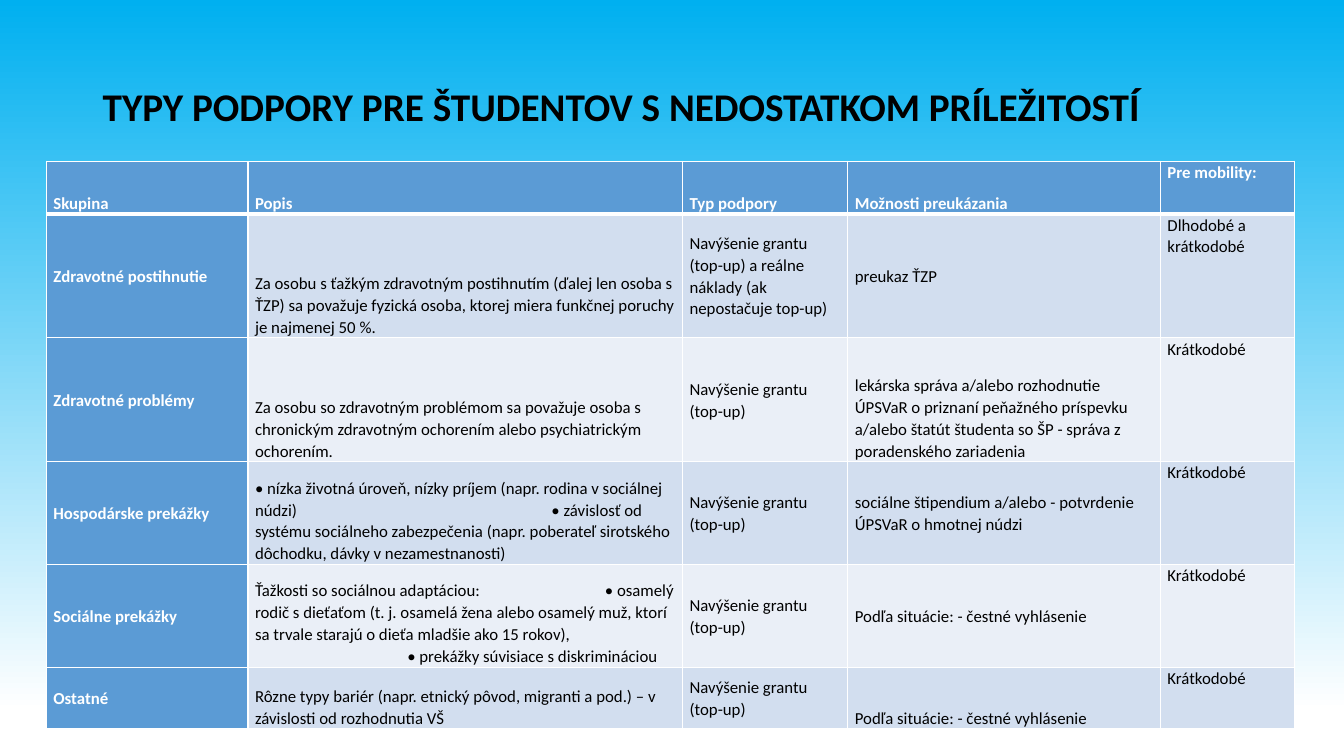
from lxml.etree import SubElement
from pptx import Presentation
from pptx.dml.color import RGBColor
from pptx.enum.text import MSO_ANCHOR
from pptx.oxml.ns import qn
from pptx.util import Inches, Pt

SKY = RGBColor(0x00, 0xB0, 0xF0)
WHITE = RGBColor(0xFF, 0xFF, 0xFF)
BLACK = RGBColor(0x00, 0x00, 0x00)
BLUE = RGBColor(0x5B, 0x9B, 0xD5)
BANDS = (RGBColor(0xEA, 0xEF, 0xF7), RGBColor(0xD2, 0xDE, 0xEF))

FONT = "Calibri"
TITLE = "TYPY PODPORY PRE ŠTUDENTOV S NEDOSTATKOM PRÍLEŽITOSTÍ"
COLUMN_WIDTHS = (2, 4.31, 1.64, 3.1, 1.33)
ROW_HEIGHTS = (0.52, 1.23, 1.23, 1.02, 1.02, 0.61)
GRANT = "Navýšenie grantu (top-up)"
DECLARATION = "Podľa situácie: - čestné vyhlásenie"
SHORT = "Krátkodobé"
ROWS = (
    ("Skupina", "Popis", "Typ podpory", "Možnosti preukázania", "Pre mobility:"),
    ("Zdravotné postihnutie",
     "Za osobu s ťažkým zdravotným postihnutím (ďalej len osoba s ŤZP) sa považuje "
     "fyzická osoba, ktorej miera funkčnej poruchy je najmenej 50 %.",
     "Navýšenie grantu (top-up) a reálne náklady (ak nepostačuje top-up)",
     "preukaz ŤZP", "Dlhodobé a krátkodobé"),
    ("Zdravotné problémy",
     "Za osobu so zdravotným problémom sa považuje osoba s chronickým zdravotným "
     "ochorením alebo psychiatrickým ochorením.",
     GRANT,
     "lekárska správa a/alebo rozhodnutie ÚPSVaR o priznaní peňažného príspevku "
     "a/alebo štatút študenta so ŠP - správa z poradenského zariadenia", SHORT),
    ("Hospodárske prekážky",
     "• nízka životná úroveň, nízky príjem (napr. rodina v sociálnej núdzi)\t"
     "• závislosť od systému sociálneho zabezpečenia (napr. poberateľ sirotského "
     "dôchodku, dávky v nezamestnanosti)",
     GRANT, "sociálne štipendium a/alebo - potvrdenie ÚPSVaR o hmotnej núdzi", SHORT),
    ("Sociálne prekážky",
     "Ťažkosti so sociálnou adaptáciou:\t• osamelý rodič s dieťaťom (t. j. osamelá "
     "žena alebo osamelý muž, ktorí sa trvale starajú o dieťa mladšie ako 15 rokov),"
     "\v\t• prekážky súvisiace s diskrimináciou",
     GRANT, DECLARATION, SHORT),
    ("Ostatné",
     "Rôzne typy bariér (napr. etnický pôvod, migranti a pod.) – v závislosti od "
     "rozhodnutia VŠ",
     GRANT, DECLARATION, SHORT),
)
TAB_STOPS = {(3, 1): (2.94,), (4, 1): (1.51, 3.47)}
BOTTOM_PROOFS = (2, 5)


def paint_background(page):
    """Fade the page from sky blue at the top to white."""
    fill = page.background.fill
    fill.gradient()
    fill.gradient_angle = 270
    for stop, color, position in zip(fill.gradient_stops, (SKY, WHITE), (0, 0.94)):
        stop.color.rgb = color
        stop.position = position


def format_text(para, size, color, bold, spacing):
    """Set the line spacing and the font of every run."""
    para.line_spacing = spacing
    for span in para.runs:
        span.font.name = FONT
        span.font.size = Pt(size)
        span.font.bold = bold
        span.font.color.rgb = color


def add_title(page):
    """Add the heading above the table."""
    box = page.shapes.add_textbox(Inches(0.92), Inches(0.4), Inches(11.5), Inches(1.35))
    frame = box.text_frame
    frame.word_wrap = True
    frame.vertical_anchor = MSO_ANCHOR.MIDDLE
    frame.text = TITLE
    format_text(frame.paragraphs[0], 28, BLACK, True, 0.9)


def add_tab_stops(para, positions):
    """Give a paragraph left tab stops at positions in inches."""
    tabs = SubElement(para._p.get_or_add_pPr(), qn("a:tabLst"))
    for position in positions:
        SubElement(tabs, qn("a:tab"), pos=str(Inches(position)), algn="l")


def add_borders(cell, row):
    """Draw white cell borders, thicker below the header row."""
    properties = cell._tc.get_or_add_tcPr()
    widths = {"L": 1, "R": 1, "T": 3 if row == 1 else 1, "B": 3 if row == 0 else 1}
    for side, width in widths.items():
        line = SubElement(properties, qn(f"a:ln{side}"), w=str(Pt(width)))
        fill = SubElement(line, qn("a:solidFill"))
        SubElement(fill, qn("a:srgbClr"), val=str(WHITE))


def cell_anchor(row, column):
    """Return the vertical anchor that a cell's column and row call for."""
    if column == 4:
        return MSO_ANCHOR.TOP
    if row == 0 or column == 1 or (column == 3 and row in BOTTOM_PROOFS):
        return MSO_ANCHOR.BOTTOM
    return MSO_ANCHOR.MIDDLE


def fill_cell(cell, row, column, text):
    """Write and style one table cell."""
    heading = row == 0 or column == 0
    cell.margin_left = cell.margin_right = Inches(0.07)
    cell.margin_top = cell.margin_bottom = 0
    cell.vertical_anchor = cell_anchor(row, column)
    add_borders(cell, row)
    cell.fill.solid()
    cell.fill.fore_color.rgb = BLUE if heading else BANDS[row % 2]
    para = cell.text_frame.paragraphs[0]
    para.text = text
    format_text(para, 12, WHITE if heading else BLACK, heading, 1.07)
    if (row, column) in TAB_STOPS:
        add_tab_stops(para, TAB_STOPS[row, column])


def add_support_table(page):
    """Add the table of support types."""
    table = page.shapes.add_table(
        len(ROWS), len(COLUMN_WIDTHS), Inches(0.46), Inches(1.6),
        Inches(sum(COLUMN_WIDTHS)), Inches(sum(ROW_HEIGHTS))).table
    for column, width in zip(table.columns, COLUMN_WIDTHS):
        column.width = Inches(width)
    for row, height in zip(table.rows, ROW_HEIGHTS):
        row.height = Inches(height)
    for row, texts in enumerate(ROWS):
        for column, text in enumerate(texts):
            fill_cell(table.cell(row, column), row, column, text)


def main():
    """Build the deck and save it."""
    deck = Presentation()
    deck.slide_width = Inches(13.33)
    deck.slide_height = Inches(7.5)
    page = deck.slides.add_slide(deck.slide_layouts[6])
    paint_background(page)
    add_title(page)
    add_support_table(page)
    deck.save("out.pptx")


if __name__ == "__main__":
    main()
